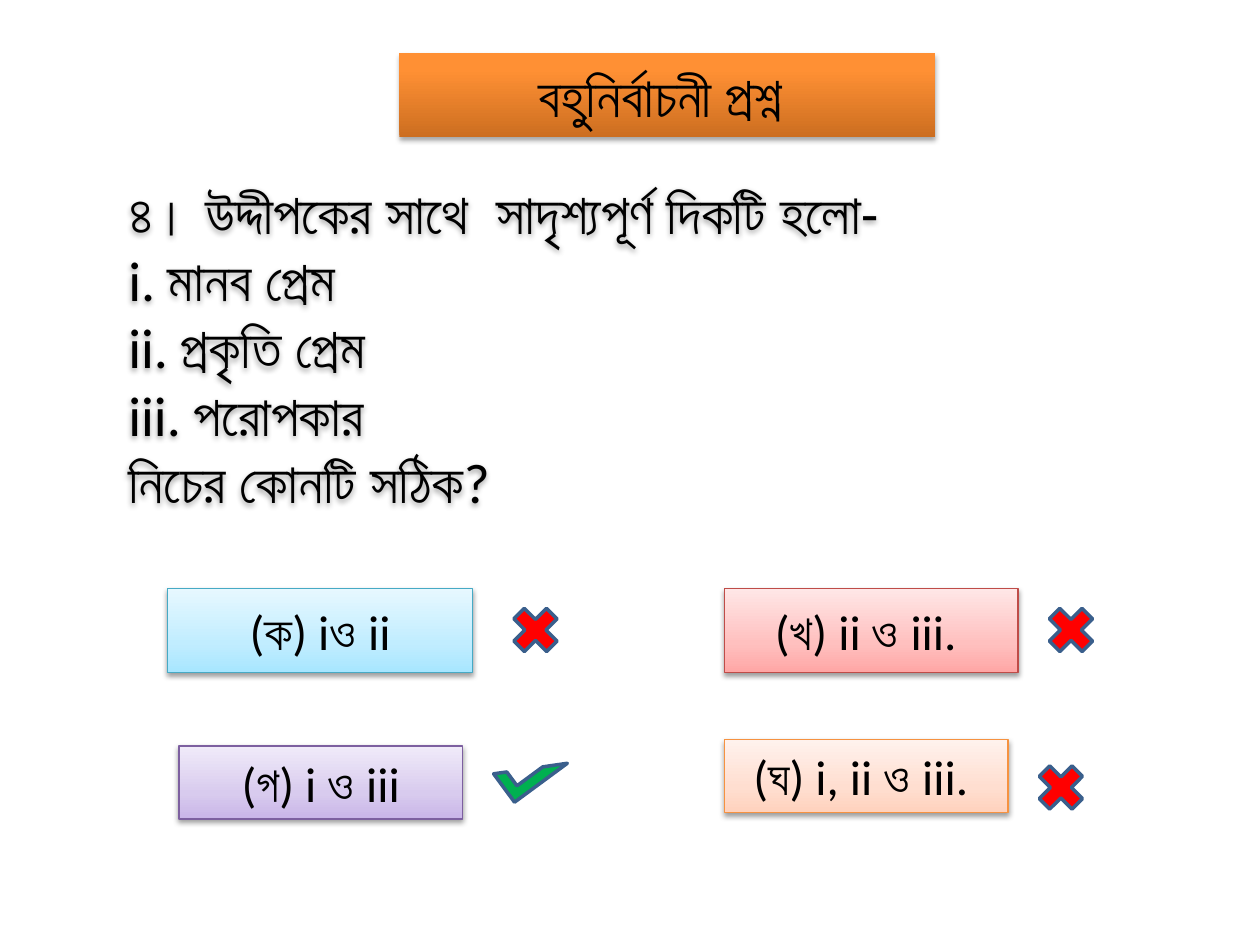
import copy
import dataclasses
import pptx
import pptx.dml.color
import pptx.enum.shapes
import pptx.enum.text
import pptx.oxml
import pptx.oxml.ns
import pptx.util

Inches, Pt = pptx.util.Inches, pptx.util.Pt
RGB = pptx.dml.color.RGBColor.from_string
KIND = pptx.enum.shapes.MSO_SHAPE
ALIGN = pptx.enum.text.PP_ALIGN


@dataclasses.dataclass(frozen=True)
class Theme:
    font: str = "Calibri"
    ink: str = "000000"
    large: int = 32
    small: int = 28
    edge: str = "3A5F8C"
    wrong: str = "FF0000"
    right: str = "00B050"
    title: tuple = ((0, "CC6E20"), (0.8, "FF9034"), (1, "FF9136"))
    blue: tuple = ((0, "A7E6FF"), (0.35, "C1EDFF"), (1, "E7F8FF"))
    red: tuple = ((0, "FFA6A5"), (0.35, "FFC0BF"), (1, "FFE7E7"))
    violet: tuple = ((0, "C9B5E8"), (0.35, "D8CBEE"), (1, "F0EAF9"))
    orange: tuple = ((0, "FFD2BD"), (0.35, "FFDED0"), (1, "FFF2ED"))


class Quiz:
    def __init__(self, slide, theme):
        self.slide = slide
        self.theme = theme

    def place(self, kind, at):
        shape = self.slide.shapes.add_shape(kind, *map(Inches, at))
        shape.shadow.inherit = False
        return shape

    def shade(self, shape, alpha=38, dist=1.6):
        shape.shadow.inherit = False
        space = pptx.oxml.ns.nsdecls("a")
        glow = pptx.oxml.parse_xml(
            f'<a:outerShdw {space} blurRad="{Pt(3.1)}" dist="{Pt(dist)}" '
            'dir="5400000" rotWithShape="0"><a:srgbClr val="000000">'
            f'<a:alpha val="{alpha * 1000}"/></a:srgbClr></a:outerShdw>')
        shape.element.spPr.find(pptx.oxml.ns.qn("a:effectLst")).append(glow)

    def blend(self, shape, stops):
        fill = shape.fill
        fill.gradient()
        fill.gradient_angle = 90
        group = shape.element.spPr.find(".//" + pptx.oxml.ns.qn("a:gsLst"))
        group.append(copy.deepcopy(group[-1]))
        for stop, (pos, tint) in zip(fill.gradient_stops, stops):
            stop.position = pos
            stop.color.rgb = RGB(tint)

    def letter(self, shape, lines, size, align):
        frame = shape.text_frame
        frame.word_wrap = True
        frame.vertical_anchor = pptx.enum.text.MSO_ANCHOR.MIDDLE
        frame.text = "\n".join(lines)
        look = {"name": self.theme.font, "size": Pt(size)}
        for para in frame.paragraphs:
            para.alignment = align
            font = para.runs[0].font
            for key, value in look.items():
                setattr(font, key, value)
            font.color.rgb = RGB(self.theme.ink)

    def stroke(self, shape, tint, width):
        shape.line.color.rgb = RGB(tint)
        shape.line.width = Pt(width)

    def text(self, at, lines):
        box = self.slide.shapes.add_textbox(*map(Inches, at))
        self.shade(box)
        self.letter(box, lines, self.theme.large, ALIGN.JUSTIFY)

    def panel(self, at, words, stops, size, edge=None, **shadow):
        box = self.place(KIND.RECTANGLE, at)
        self.blend(box, stops)
        if edge:
            self.stroke(box, edge, 0.75)
        else:
            box.line.fill.background()
        self.shade(box, **shadow)
        self.letter(box, [words], size, ALIGN.CENTER)

    def mark(self, kind, at, tint, turn=0):
        sign = self.place(kind, at)
        sign.rotation = turn
        sign.fill.solid()
        sign.fill.fore_color.rgb = RGB(tint)
        self.stroke(sign, self.theme.edge, 2)


def main():
    deck = pptx.Presentation()
    deck.slide_width, deck.slide_height = Inches(10), Inches(7.5)
    theme = Theme()
    quiz = Quiz(deck.slides.add_slide(deck.slide_layouts[6]), theme)

    # Question
    quiz.text((0.92, 1.25, 7.83, 3), [
        "৪। উদ্দীপকের সাথে  সাদৃশ্যপূর্ণ দিকটি হলো-",
        "i. মানব প্রেম",
        "ii. প্রকৃতি প্রেম",
        "iii. পরোপকার",
        "নিচের কোনটি সঠিক?",
    ])

    # Answers
    for at, words, stops, edge in (
        ((1.33, 4.67, 2.42, 0.67), "(ক) iও ii", theme.blue, "46AAC5"),
        ((5.75, 4.67, 2.33, 0.67), "(খ) ii ও iii. ", theme.red, "BF4C48"),
        ((1.42, 5.92, 2.25, 0.58), "(গ) i ও iii", theme.violet, "7D60A0"),
        ((5.75, 5.87, 2.25, 0.58), "(ঘ) i, ii ও iii. ", theme.orange, "F69240"),
    ):
        quiz.panel(at, words, stops, theme.small, edge)

    # Title
    quiz.panel((3.17, 0.42, 4.25, 0.67), "বহুনির্বাচনী প্রশ্ন ",
               theme.title, theme.large, alpha=35, dist=1.8)

    # Crosses and tick
    for left, top in ((4, 4.75), (8.25, 4.75), (8.17, 6)):
        quiz.mark(KIND.MATH_MULTIPLY, (left, top, 0.5, 0.5), theme.wrong)
    quiz.mark(KIND.HALF_FRAME, (4.07, 5.84, 0.28, 0.52), theme.right, 233.6)

    deck.save("out.pptx")


if __name__ == "__main__":
    main()
